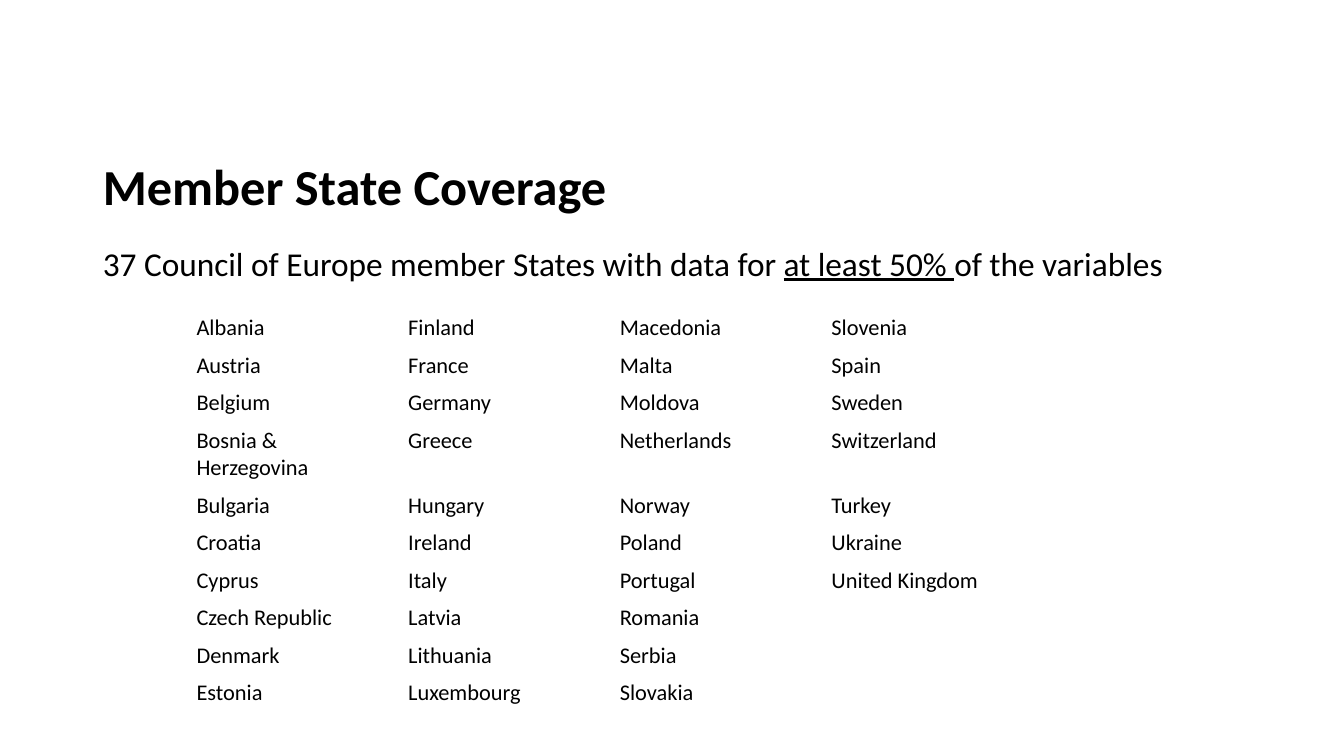
from pptx import Presentation
from pptx.dml.color import RGBColor
from pptx.enum.text import MSO_ANCHOR, MSO_AUTO_SIZE, PP_ALIGN
from pptx.oxml.xmlchemy import OxmlElement
from pptx.util import Pt

BLACK = RGBColor(0, 0, 0)
WHITE = RGBColor(255, 255, 255)
FONT = "Calibri"


def format_font(font, size, bold=False):
    font.name = FONT
    font.size = Pt(size)
    font.bold = bold
    font.color.rgb = BLACK


def place(shape, left, top, width, height):
    shape.left, shape.top = Pt(left), Pt(top)
    shape.width, shape.height = Pt(width), Pt(height)


presentation = Presentation()
presentation.slide_width = Pt(960)
presentation.slide_height = Pt(540)
slide = presentation.slides.add_slide(presentation.slide_layouts[1])

# Title
title = slide.shapes.title
place(title, 66.24, 114.5, 828, 41)
title.text_frame.text = "Member State Coverage"
title.text_frame.auto_size = MSO_AUTO_SIZE.NONE
title.text_frame.vertical_anchor = MSO_ANCHOR.MIDDLE
paragraph = title.text_frame.paragraphs[0]
paragraph.alignment = PP_ALIGN.LEFT
paragraph.line_spacing = 0.9
format_font(paragraph.runs[0].font, 36, bold=True)

# Statement without a bullet
body = slide.placeholders[1]
place(body, 66.24, 175.7, 828, 38)
body.text_frame.auto_size = MSO_AUTO_SIZE.NONE
body.text_frame.vertical_anchor = MSO_ANCHOR.TOP
paragraph = body.text_frame.paragraphs[0]
paragraph.line_spacing = 0.8
paragraph.space_before = Pt(0)
properties = paragraph._p.get_or_add_pPr()
properties.set("marL", "0")
properties.set("indent", "0")
properties.append(OxmlElement("a:buNone"))
for text, underlined in [
    ("37 Council of Europe member States with data for ", False),
    ("at least 50% ", True),
    ("of the variables", False),
]:
    run = paragraph.add_run()
    run.text = text
    format_font(run.font, 23.8)
    run.font.underline = underlined

# Member States, listed down each column
STATE_COLUMNS = [
    ["Albania", "Austria", "Belgium", "Bosnia & Herzegovina", "Bulgaria",
     "Croatia", "Cyprus", "Czech Republic", "Denmark", "Estonia"],
    ["Finland", "France", "Germany", "Greece", "Hungary",
     "Ireland", "Italy", "Latvia", "Lithuania", "Luxembourg"],
    ["Macedonia", "Malta", "Moldova", "Netherlands", "Norway",
     "Poland", "Portugal", "Romania", "Serbia", "Slovakia"],
    ["Slovenia", "Spain", "Sweden", "Switzerland", "Turkey",
     "Ukraine", "United Kingdom", "", "", ""],
]
COLUMN_WIDTH, ROW_HEIGHT, TALL_ROW_HEIGHT = 151.2, 23, 40
TALL_ROW = 3
row_count = len(STATE_COLUMNS[0])
table = slide.shapes.add_table(
    row_count, len(STATE_COLUMNS), Pt(133.2), Pt(221),
    Pt(COLUMN_WIDTH * len(STATE_COLUMNS)),
    Pt(ROW_HEIGHT * (row_count - 1) + TALL_ROW_HEIGHT),
).table
table.first_row = False
table.horz_banding = False
for row in table.rows:
    row.height = Pt(ROW_HEIGHT)
table.rows[TALL_ROW].height = Pt(TALL_ROW_HEIGHT)

for column_index, states in enumerate(STATE_COLUMNS):
    table.columns[column_index].width = Pt(COLUMN_WIDTH)
    for row_index, state in enumerate(states):
        cell = table.cell(row_index, column_index)
        cell.fill.solid()
        cell.fill.fore_color.rgb = WHITE
        # No borders
        for side in ("a:lnL", "a:lnR", "a:lnT", "a:lnB"):
            border = OxmlElement(side)
            border.append(OxmlElement("a:noFill"))
            cell._tc.tcPr.insert_element_before(border, "a:solidFill")
        if state:
            cell.text_frame.text = state
            format_font(cell.text_frame.paragraphs[0].runs[0].font, 16)
        else:
            # Keep empty cells from stretching their row
            paragraph = cell.text_frame.paragraphs[0]
            paragraph._p.get_or_add_endParaRPr().set("sz", "1600")

presentation.save("out.pptx")
